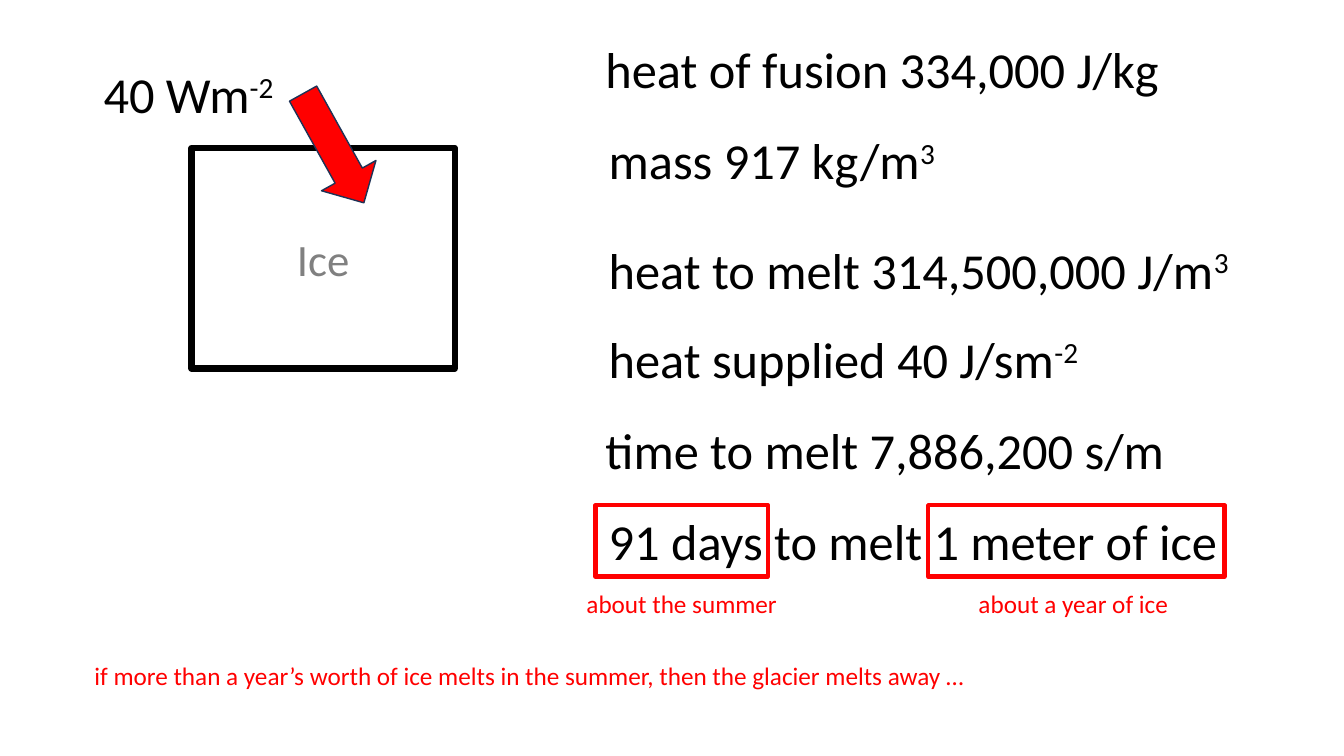
from pptx import Presentation
from pptx.dml.color import RGBColor
from pptx.enum.shapes import MSO_SHAPE
from pptx.enum.text import MSO_ANCHOR, MSO_AUTO_SIZE, PP_ALIGN
from pptx.util import Cm, Pt

RECTANGLE = MSO_SHAPE.RECTANGLE
DOWN_ARROW = MSO_SHAPE.DOWN_ARROW
MIDDLE = MSO_ANCHOR.MIDDLE
CENTER = PP_ALIGN.CENTER
FIT_SHAPE = MSO_AUTO_SIZE.SHAPE_TO_FIT_TEXT

COLORS = {
    "white": "FFFFFF",
    "black": "000000",
    "gray": "808080",
    "red": "FF0000",
    "navy": "1E3256",
}
FACT_HEIGHT = 1.8
NOTE_HEIGHT = 1.02
RESULT_TOP = 12.73
NOTE_TOP = 14.71


class SlideBuilder:
    def __init__(self, page, font="Calibri"):
        self.page = page
        self.font = font

    def color(self, name):
        return RGBColor.from_string(COLORS[name])

    def style(self, span, size, color):
        span.font.name = self.font
        span.font.size = Pt(size)
        span.font.color.rgb = self.color(color)

    def text(self, left, top, width, height, words, size, color, power=""):
        """Add one unwrapped line, with an optional superscript at its end."""
        box = self.page.shapes.add_textbox(Cm(left), Cm(top), Cm(width), Cm(height))
        frame = box.text_frame
        frame.word_wrap = False
        frame.auto_size = FIT_SHAPE
        frame.text = words
        para = frame.paragraphs[0]
        if power:
            raised = para.add_run()
            raised.text = power
            raised.font._element.set("baseline", "30000")
        for span in para.runs:
            self.style(span, size, color)

    def fact(self, left, top, width, words, power=""):
        self.text(left, top, width, FACT_HEIGHT, words, 36, "black", power)

    def note(self, left, top, width, words):
        self.text(left, top, width, NOTE_HEIGHT, words, 18, "red")

    def shape(self, kind, left, top, width, height, line, weight, fill=None):
        shape = self.page.shapes.add_shape(
            kind, Cm(left), Cm(top), Cm(width), Cm(height))
        shape.shadow.inherit = False
        if fill:
            shape.fill.solid()
            shape.fill.fore_color.rgb = self.color(fill)
        else:
            shape.fill.background()
        shape.line.color.rgb = self.color(line)
        shape.line.width = Pt(weight)
        return shape

    def label(self, shape, words, size, color):
        frame = shape.text_frame
        frame.vertical_anchor = MIDDLE
        frame.text = words
        para = frame.paragraphs[0]
        para.alignment = CENTER
        self.style(para.runs[0], size, color)


def main():
    deck = Presentation()
    deck.slide_width, deck.slide_height = Cm(33.87), Cm(19.05)
    builder = SlideBuilder(deck.slides.add_slide(deck.slide_layouts[6]))

    ice = builder.shape(RECTANGLE, 4.83, 3.73, 6.63, 5.56, "black", 4.5, "white")
    builder.label(ice, "Ice", 32, "gray")

    facts = [
        (15.01, 0.84, 14.58, "heat of fusion 334,000 J/kg", ""),
        (15.09, 3.12, 8.86, "mass 917 kg/m", "3"),
        (15.09, 5.89, 16.33, "heat to melt 314,500,000 J/m", "3"),
        (15.09, 8.15, 12.55, "heat supplied 40 J/sm", "-2"),
        (15.01, 10.44, 14.73, "time to melt 7,886,200 s/m", ""),
        (15.09, RESULT_TOP, 15.98, "91 days to melt 1 meter of ice", ""),
        (2.36, 1.47, 4.93, "40 Wm", "-2"),
    ]
    for fact in facts:
        builder.fact(*fact)

    heat_arrow = builder.shape(DOWN_ARROW, 7.62, 2.16, 1.57, 3.15, "navy", 1, "red")
    heat_arrow.rotation = 330.9

    for left, width in [(15.01, 4.34), (23.39, 7.47)]:
        builder.shape(RECTANGLE, left, RESULT_TOP, width, FACT_HEIGHT, "red", 3)

    builder.note(14.53, NOTE_TOP, 5.36, "about the summer")
    builder.note(24.41, NOTE_TOP, 5.36, "about a year of ice")
    builder.note(2.13, 16.51, 22.89, "if more than a year’s worth of ice melts "
                 "in the summer, then the glacier melts away …")

    deck.save("out.pptx")


if __name__ == "__main__":
    main()
